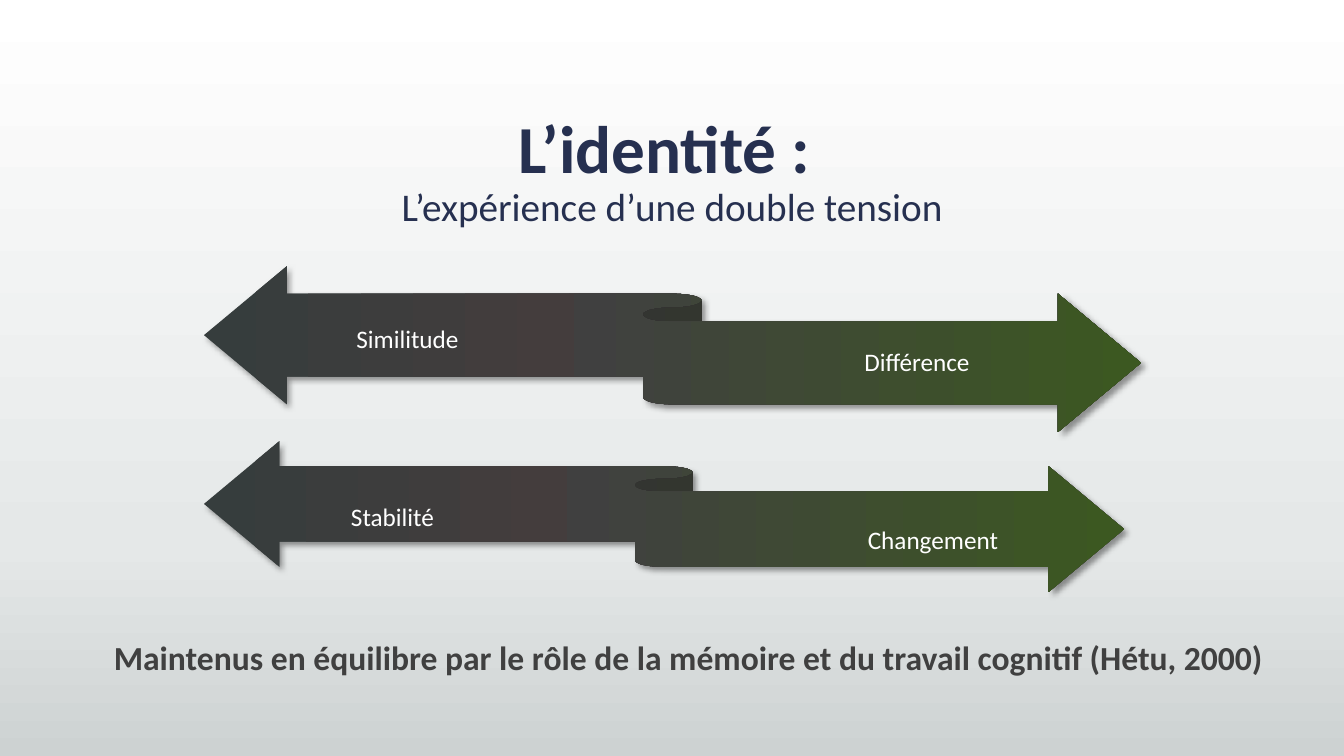
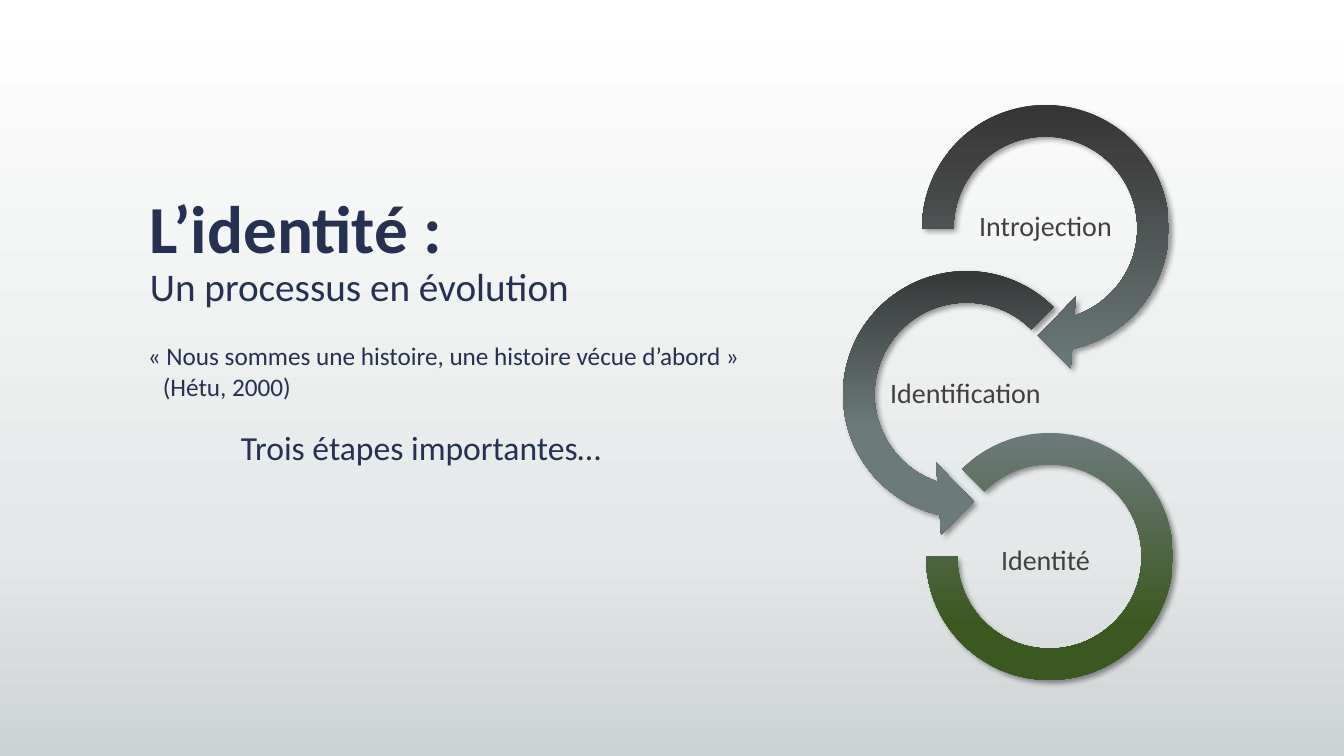
from pptx import Presentation
from pptx.dml.color import RGBColor
from pptx.enum.shapes import MSO_SHAPE
from pptx.enum.text import MSO_ANCHOR, PP_ALIGN
from pptx.oxml import parse_xml
from pptx.oxml.ns import nsdecls, qn
from pptx.util import Pt

PX = 914400 / 100.8
FONT = "Calibri"

WHITE = RGBColor(0xFF, 0xFF, 0xFF)
MIST = RGBColor(0xE5, 0xE8, 0xE8)
SILVER = RGBColor(0xCD, 0xD2, 0xD2)
NAVY = RGBColor(0x26, 0x30, 0x50)
GREY = RGBColor(0x40, 0x40, 0x40)
SLATE = RGBColor(0x36, 0x3D, 0x3D)
BROWN = RGBColor(0x44, 0x3D, 0x3D)
COAL = RGBColor(0x30, 0x30, 0x30)
STEEL = RGBColor(0x6C, 0x7A, 0x7A)
GREEN = RGBColor(0x3C, 0x58, 0x21)

BACKGROUND = [(0, WHITE), (72, MIST), (100, SILVER)]
RIBBON = [(0, SLATE), (39, BROWN), (40, GREY), (100, GREEN)]
LEFT, CENTER = PP_ALIGN.LEFT, PP_ALIGN.CENTER
TOP, MIDDLE, BOTTOM = MSO_ANCHOR.TOP, MSO_ANCHOR.MIDDLE, MSO_ANCHOR.BOTTOM

SHADOW = (
    f'<a:outerShdw {nsdecls("a")} blurRad="50800" dist="38100" dir="2700000" '
    'algn="tl" rotWithShape="0"><a:srgbClr val="000000">'
    '<a:alpha val="40000"/></a:srgbClr></a:outerShdw>'
)


def paint(fill, stops, angle):
    """Fill with a linear gradient of (percent, colour) stops."""
    fill.gradient()
    fill.gradient_angle = angle
    gs_list = fill.gradient_stops[0]._gs.getparent()
    for gs in list(gs_list):
        gs_list.remove(gs)
    for percent, color in stops:
        gs_list.append(parse_xml(
            f'<a:gs {nsdecls("a")} pos="{percent * 1000}">'
            f'<a:srgbClr val="{color}"/></a:gs>'))


def add_text(s, box, lines, color, align=LEFT, anchor=TOP, spacing=0.9, inset=True):
    """Add a text box; each line is (text, size, bold)."""
    tf = s.shapes.add_textbox(*[round(v * PX) for v in box]).text_frame
    tf.word_wrap = True
    tf.vertical_anchor = anchor
    if not inset:
        for side in ("left", "top", "right", "bottom"):
            setattr(tf, f"margin_{side}", 0)
    for i, (text, size, bold) in enumerate(lines):
        p = tf.add_paragraph() if i else tf.paragraphs[0]
        p.alignment, p.line_spacing = align, spacing
        r = p.add_run()
        r.text = text
        for name, value in {"name": FONT, "size": Pt(size), "bold": bold}.items():
            setattr(r.font, name, value)
        r.font.color.rgb = color


prs = Presentation()
prs.slide_width, prs.slide_height = round(1344 * PX), round(756 * PX)

# Shared by both slides: background, title with subtitle, gradient shapes, labels
slides = [
    {
        "title": ("L’identité : ", "L’expérience d’une double tension"),
        "title_box": (0, 99, 1344, 136),
        "title_align": CENTER,
        "angle": 0,
        "shapes": [
            (MSO_SHAPE.LEFT_RIGHT_RIBBON, (204, 266, 937, 166), [], RIBBON),
            (MSO_SHAPE.LEFT_RIGHT_RIBBON, (204, 441, 920, 151), [], RIBBON),
        ],
        "label_style": (18, WHITE),
        "labels": [
            ("Similitude", (306, 280, 203, 121)),
            ("Différence", (797, 303, 240, 121)),
            ("Stabilité", (291, 458, 203, 121)),
            ("Changement", (813, 481, 240, 121)),
        ],
    },
    {
        "title": ("L’identité :", "Un processus en évolution"),
        "title_box": (140, 179, 588, 136),
        "title_align": LEFT,
        "angle": 270,
        "shapes": [
            (MSO_SHAPE.CIRCULAR_ARROW, (902, 85, 287, 287),
             [0.11, 11.42, 45, 108, 0.125],
             [(0, COAL), (25, GREY), (100, STEEL)]),
            (MSO_SHAPE.LEFT_CIRCULAR_ARROW, (823, 251, 287, 287),
             [0.11, 11.42, 63, 189, 0.125],
             [(0, COAL), (62, STEEL), (100, STEEL)]),
            (MSO_SHAPE.BLOCK_ARC, (926, 433, 247, 247),
             [135, 108, 0.127],
             [(0, STEEL), (78, GREEN), (100, GREEN)]),
        ],
        "label_style": (20, GREY),
        "labels": [
            ("Introjection", (966, 187, 159, 80)),
            ("Identification", (886, 354, 159, 80)),
            ("Identité", (966, 521, 159, 80)),
        ],
    },
]

for content in slides:
    s = prs.slides.add_slide(prs.slide_layouts[6])
    paint(s.background.fill, BACKGROUND, 270)

    for kind, box, adjustments, stops in content["shapes"]:
        sp = s.shapes.add_shape(kind, *[round(v * PX) for v in box])
        for i, value in enumerate(adjustments):
            sp.adjustments[i] = value
        paint(sp.fill, stops, content["angle"])
        sp.line.fill.background()
        sp.shadow.inherit = False
        sp._element.spPr.find(qn("a:effectLst")).append(parse_xml(SHADOW))

    size, color = content["label_style"]
    for text, box in content["labels"]:
        add_text(s, box, [(text, size, False)], color, CENTER, MIDDLE, inset=False)

    title, subtitle = content["title"]
    add_text(s, content["title_box"], [(title, 48, True), (subtitle, 28, False)],
             NAVY, content["title_align"], BOTTOM)

tension, process = prs.slides

add_text(tension, (85, 632, 1207, 50),
         [("Maintenus en équilibre par le rôle de la mémoire et du travail cognitif "
           "(Hétu, 2000)", 24, True)], GREY, CENTER, spacing=1.0)

for text, size, box in [
    ("« Nous sommes une histoire, une histoire vécue d’abord »", 18, (138, 339, 661, 64)),
    ("(Hétu, 2000)", 18, (153, 370, 210, 64)),
    ("Trois étapes importantes…", 24, (231, 427, 511, 72)),
]:
    add_text(process, box, [(text, size, False)], NAVY)

prs.save("out.pptx")
